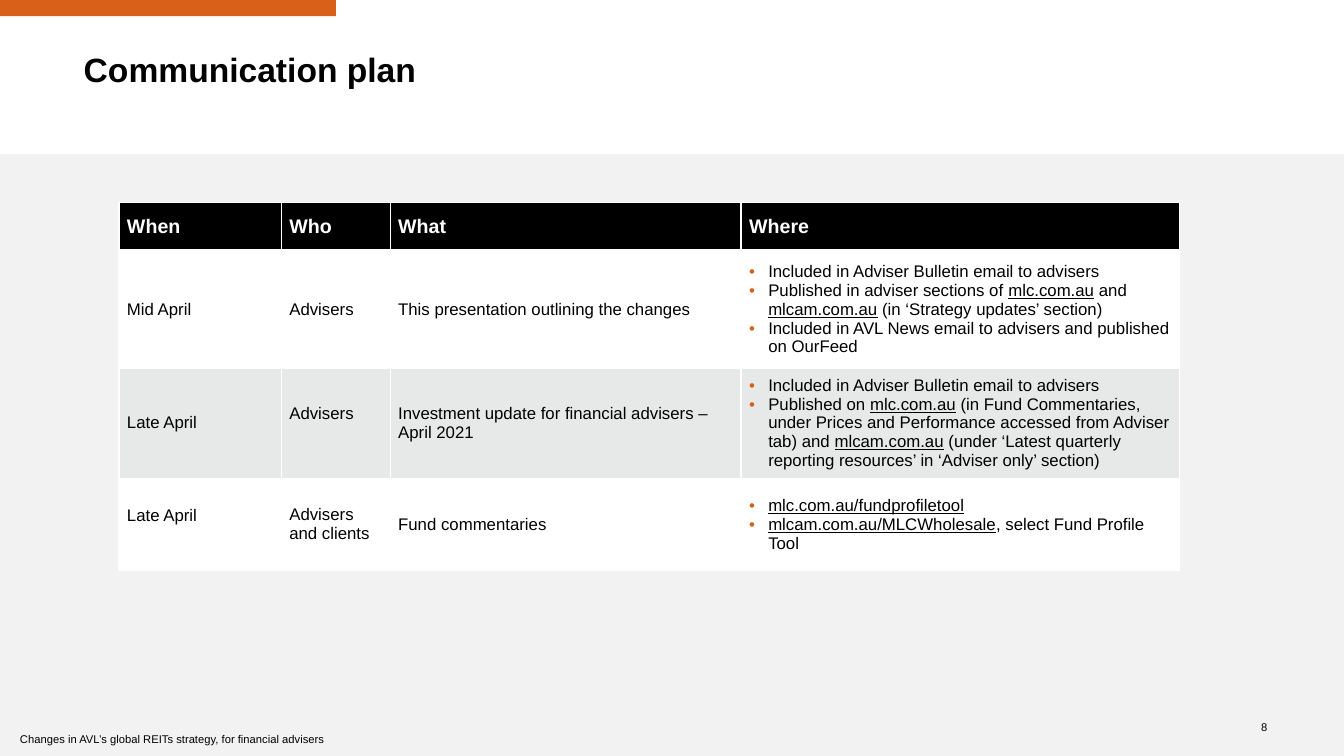
import pptx
import pptx.dml.color
import pptx.enum.shapes
import pptx.enum.text
import pptx.oxml
import pptx.util

ANCHOR = pptx.enum.text.MSO_ANCHOR
ALIGN = pptx.enum.text.PP_ALIGN
NAMESPACE = 'xmlns:a="http://schemas.openxmlformats.org/drawingml/2006/main"'


def color(value):
    return pptx.dml.color.RGBColor.from_string(value)


class CommunicationSlide:
    font_name = "Arial"
    ink = "000000"
    paper = "FFFFFF"
    accent = "D86018"
    panel = "F2F2F2"
    band = "E7E9E9"
    inset = 0.08
    indent = 0.19

    def __init__(self, presentation):
        self.presentation = presentation
        self.slide = presentation.slides.add_slide(presentation.slide_layouts[5])
        self.slide.background.fill.solid()
        self.slide.background.fill.fore_color.rgb = color(self.paper)

    def across(self, percent):
        return int(self.presentation.slide_width * percent / 100)

    def down(self, percent):
        return int(self.presentation.slide_height * percent / 100)

    def box(self, left, top, width, height):
        return self.across(left), self.down(top), self.across(width), self.down(height)

    def format_runs(self, paragraph, size, ink, bold=False):
        for run in paragraph.runs:
            run.font.name = self.font_name
            run.font.size = pptx.util.Pt(size)
            run.font.bold = bold
            run.font.color.rgb = color(ink)

    def set_margins(self, target, inset):
        target.margin_left = target.margin_right = pptx.util.Inches(inset)
        target.margin_top = target.margin_bottom = pptx.util.Inches(inset)

    def rectangle(self, area, fill):
        shape = self.slide.shapes.add_shape(
            pptx.enum.shapes.MSO_SHAPE.RECTANGLE, *self.box(*area))
        shape.shadow.inherit = False
        shape.fill.solid()
        shape.fill.fore_color.rgb = color(fill)
        shape.line.fill.background()

    def title(self, area, text):
        shape = self.slide.shapes.title
        shape.left, shape.top, shape.width, shape.height = self.box(*area)
        frame = shape.text_frame
        frame.text = text
        frame.word_wrap = True
        frame.auto_size = pptx.enum.text.MSO_AUTO_SIZE.NONE
        frame.vertical_anchor = ANCHOR.TOP
        self.set_margins(frame, 0)
        paragraph = frame.paragraphs[0]
        paragraph.alignment = ALIGN.LEFT
        paragraph.line_spacing = 0.9
        self.format_runs(paragraph, 24, self.ink, bold=True)

    def small_text(self, area, text, alignment=ALIGN.LEFT):
        frame = self.slide.shapes.add_textbox(*self.box(*area)).text_frame
        frame.text = text
        frame.word_wrap = True
        paragraph = frame.paragraphs[0]
        paragraph.alignment = alignment
        self.format_runs(paragraph, 8, self.ink)
        return frame

    def bullet(self, paragraph):
        paragraph.level = 4
        properties = paragraph._p.get_or_add_pPr()
        indent = pptx.util.Inches(self.indent)
        properties.set("marL", str(indent))
        properties.set("indent", str(-indent))
        for xml in (f'<a:buClr {NAMESPACE}><a:srgbClr val="{self.accent}"/></a:buClr>',
                    f'<a:buFont {NAMESPACE} typeface="{self.font_name}"/>',
                    f'<a:buChar {NAMESPACE} char="•"/>'):
            properties.append(pptx.oxml.parse_xml(xml))

    def borders(self, cell, top, bottom):
        properties = cell._tc.get_or_add_tcPr()
        for side, points in (("L", 1), ("R", 1), ("T", top), ("B", bottom)):
            properties.append(pptx.oxml.parse_xml(
                f'<a:ln{side} {NAMESPACE} w="{pptx.util.Pt(points)}"><a:solidFill>'
                f'<a:srgbClr val="{self.paper}"/></a:solidFill></a:ln{side}>'))

    def fill_cell(self, cell, content, row):
        header = row == 0
        bulleted = isinstance(content, list)
        self.borders(cell, 3 if row == 1 else 1, 3 if header else 1)
        cell.fill.solid()
        cell.fill.fore_color.rgb = color(
            self.ink if header else self.band if row == 2 else self.paper)
        cell.vertical_anchor = ANCHOR.MIDDLE
        self.set_margins(cell, self.inset)
        frame = cell.text_frame
        for index, line in enumerate(content if bulleted else [content]):
            paragraph = frame.add_paragraph() if index else frame.paragraphs[0]
            if bulleted:
                self.bullet(paragraph)
            for position, part in enumerate(line.split("|")):
                if part:
                    run = paragraph.add_run()
                    run.text = part
                    run.font.underline = position % 2 == 1
            self.format_runs(paragraph, 14 if header else 12,
                             self.paper if header else self.ink, header)

    def table(self, left, top, columns, rows, contents):
        table = self.slide.shapes.add_table(
            len(rows), len(columns),
            *self.box(left, top, sum(columns), sum(rows))).table
        for column, width in zip(table.columns, columns):
            column.width = self.across(width)
        for row, height in zip(table.rows, rows):
            row.height = self.down(height)
        for row, line in enumerate(contents):
            for column, content in enumerate(line):
                self.fill_cell(table.cell(row, column), content, row)
        return table


PLAN = [
    ["When", "Who", "What", "Where"],
    ["Mid April", "Advisers", "This presentation outlining the changes", [
        "Included in Adviser Bulletin email to advisers",
        "Published in adviser sections of |mlc.com.au| and |mlcam.com.au|"
        " (in ‘Strategy updates’ section)",
        "Included in AVL News email to advisers and published on OurFeed"]],
    ["Late April", "Advisers", "Investment update for financial advisers – April 2021", [
        "Included in Adviser Bulletin email to advisers",
        "Published on |mlc.com.au| (in Fund Commentaries, under Prices and Performance"
        " accessed from Adviser tab) and |mlcam.com.au| (under ‘Latest quarterly"
        " reporting resources’ in ‘Adviser only’ section)"]],
    ["Late April", "Advisers and clients", "Fund commentaries", [
        "|mlc.com.au/fundprofiletool|",
        "|mlcam.com.au/MLCWholesale|, select Fund Profile Tool"]],
]
RAISED_CELLS = [(2, 1), (3, 0)]


def main():
    presentation = pptx.Presentation()
    presentation.slide_width = pptx.util.Inches(13.33)
    presentation.slide_height = pptx.util.Inches(7.5)
    page = CommunicationSlide(presentation)
    page.rectangle((0, 0, 25, 2.13), page.accent)
    page.rectangle((0, 20.4, 100, 79.6), page.panel)
    page.title((6.23, 7.07, 79.74, 7.6), "Communication plan")
    table = page.table(8.85, 26.8, [12.08, 8.1, 26.11, 32.63],
                       [6.4, 15.47, 12.27, 12.27], PLAN)
    for row, column in RAISED_CELLS:
        table.cell(row, column).margin_bottom = pptx.util.Inches(0.26)
    number = page.small_text((92.2, 94.8, 2.1, 2.8), "8", ALIGN.RIGHT)
    number.vertical_anchor = ANCHOR.MIDDLE
    page.set_margins(number, 0)
    page.small_text((0.75, 96.27, 27.16, 2.8),
                    "Changes in AVL’s global REITs strategy, for financial advisers")
    presentation.save("out.pptx")


if __name__ == "__main__":
    main()
